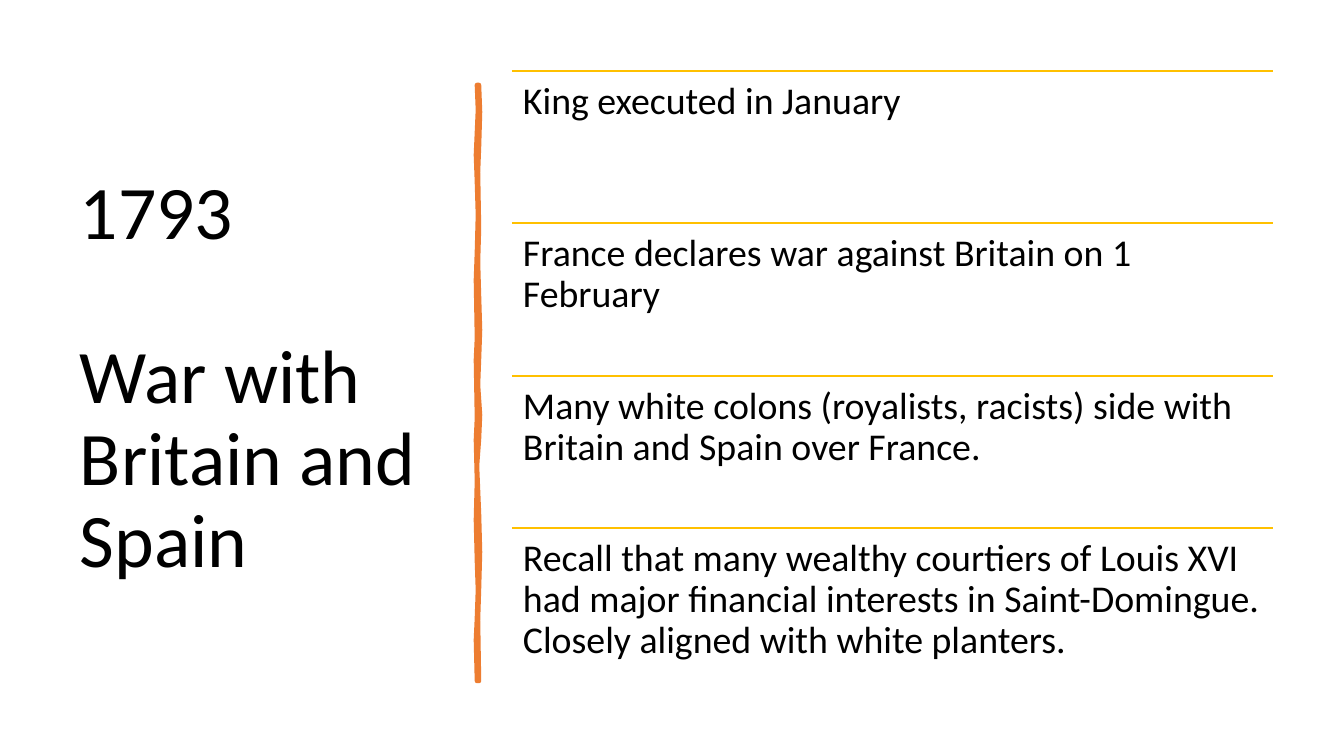
"""Build the slide on the 1793 war with Britain and Spain."""
from dataclasses import dataclass

import lxml.etree
import pptx
import pptx.dml.color
import pptx.enum.shapes
import pptx.enum.text
import pptx.oxml.ns
import pptx.slide
import pptx.util

EMU_PER_PX = 914400 / 100.8
BLACK = pptx.dml.color.RGBColor(0x00, 0x00, 0x00)
ORANGE = pptx.dml.color.RGBColor(0xED, 0x7D, 0x31)
GOLD = pptx.dml.color.RGBColor(0xFF, 0xC0, 0x00)
FONT = "Calibri"

ROW_LEFT, ROW_TOP, ROW_WIDTH = 512, 71, 761
ROWS_HEIGHT = 610
ROW_TEXTS = [
    "King executed in January",
    "France declares war against Britain on 1 February",
    "Many white colons (royalists, racists) side with Britain and Spain over France.",
    "Recall that many wealthy courtiers of Louis XVI had major financial interests "
    "in Saint-Domingue. Closely aligned with white planters.",
]
BRUSH_RIGHT = [
    (479, 85), (480, 112), (479, 147), (478, 172), (479, 228), (478, 262),
    (479, 296), (480, 330), (479, 359), (478, 385), (480, 415), (479, 439),
    (477, 466), (479, 514), (480, 552), (479, 589), (478, 620), (479, 681),
]
BRUSH_LEFT = [
    (477, 681), (476, 640), (477, 618), (478, 590), (477, 561), (476, 520),
    (477, 481), (476, 440), (477, 418), (476, 360), (477, 338), (476, 280),
    (477, 252), (478, 215), (477, 182), (476, 155), (478, 110), (477, 85),
]


@dataclass(frozen=True)
class TextBlock:
    """A text box with its place, paragraphs and style."""

    left: int
    top: int
    width: int
    height: int
    paragraphs: list[str]
    size: int
    inset: int
    anchor: pptx.enum.text.MSO_ANCHOR
    gap: int = 0


def px(length: int) -> pptx.util.Emu:
    """Turn pixels into EMU."""
    return pptx.util.Emu(round(length * EMU_PER_PX))


def add_text(s: pptx.slide.Slide, block: TextBlock) -> None:
    """Draw a text block."""
    sp = s.shapes.add_textbox(
        px(block.left), px(block.top), px(block.width), px(block.height)
    )
    tf = sp.text_frame
    tf.word_wrap = True
    tf.vertical_anchor = block.anchor
    tf.margin_left = tf.margin_right = px(block.inset)
    tf.margin_top = tf.margin_bottom = px(block.inset)
    for i, text in enumerate(block.paragraphs):
        p = tf.add_paragraph() if i else tf.paragraphs[0]
        p.line_spacing = 0.9
        if i:
            p.space_before = pptx.util.Pt(block.gap)
        r = p.add_run()
        r.text = text
        r.font.name = FONT
        r.font.size = pptx.util.Pt(block.size)
        r.font.color.rgb = BLACK


def add_rule(s: pptx.slide.Slide, left: int, top: int, width: int) -> None:
    """Draw a horizontal gold rule."""
    c = s.shapes.add_connector(
        pptx.enum.shapes.MSO_CONNECTOR.STRAIGHT,
        px(left), px(top), px(left + width), px(top),
    )
    c.line.color.rgb = GOLD
    c.line.width = pptx.util.Pt(1)
    lxml.etree.SubElement(c._element.spPr, pptx.oxml.ns.qn("a:effectLst"))


def add_brush_stroke(s: pptx.slide.Slide) -> None:
    """Draw the wavy orange divider."""
    start, *rest = BRUSH_RIGHT + BRUSH_LEFT
    builder = s.shapes.build_freeform(*start, scale=EMU_PER_PX)
    builder.add_line_segments(rest, close=True)
    sp = builder.convert_to_shape()
    sp.shadow.inherit = False
    sp.fill.solid()
    sp.fill.fore_color.rgb = ORANGE
    sp.line.color.rgb = ORANGE
    sp.line.width = pptx.util.Pt(3.25)
    ln = sp._element.spPr.find(pptx.oxml.ns.qn("a:ln"))
    lxml.etree.SubElement(ln, pptx.oxml.ns.qn("a:round"))


def main() -> None:
    """Build and save the slide."""
    prs = pptx.Presentation()
    prs.slide_width, prs.slide_height = px(1344), px(756)
    s = prs.slides.add_slide(prs.slide_layouts[6])
    anchors = pptx.enum.text.MSO_ANCHOR
    title = ["1793", "War with Britain and Spain"]
    add_text(s, TextBlock(70, 71, 377, 616, title, 54, 10, anchors.MIDDLE, 59))
    add_brush_stroke(s)
    count = len(ROW_TEXTS)
    for i, text in enumerate(ROW_TEXTS):
        top = ROW_TOP + i * ROWS_HEIGHT // count
        add_rule(s, ROW_LEFT, top, ROW_WIDTH)
        add_text(s, TextBlock(
            ROW_LEFT, top, ROW_WIDTH, ROWS_HEIGHT // count, [text], 27, 11, anchors.TOP
        ))
    prs.save("out.pptx")


if __name__ == "__main__":
    main()
